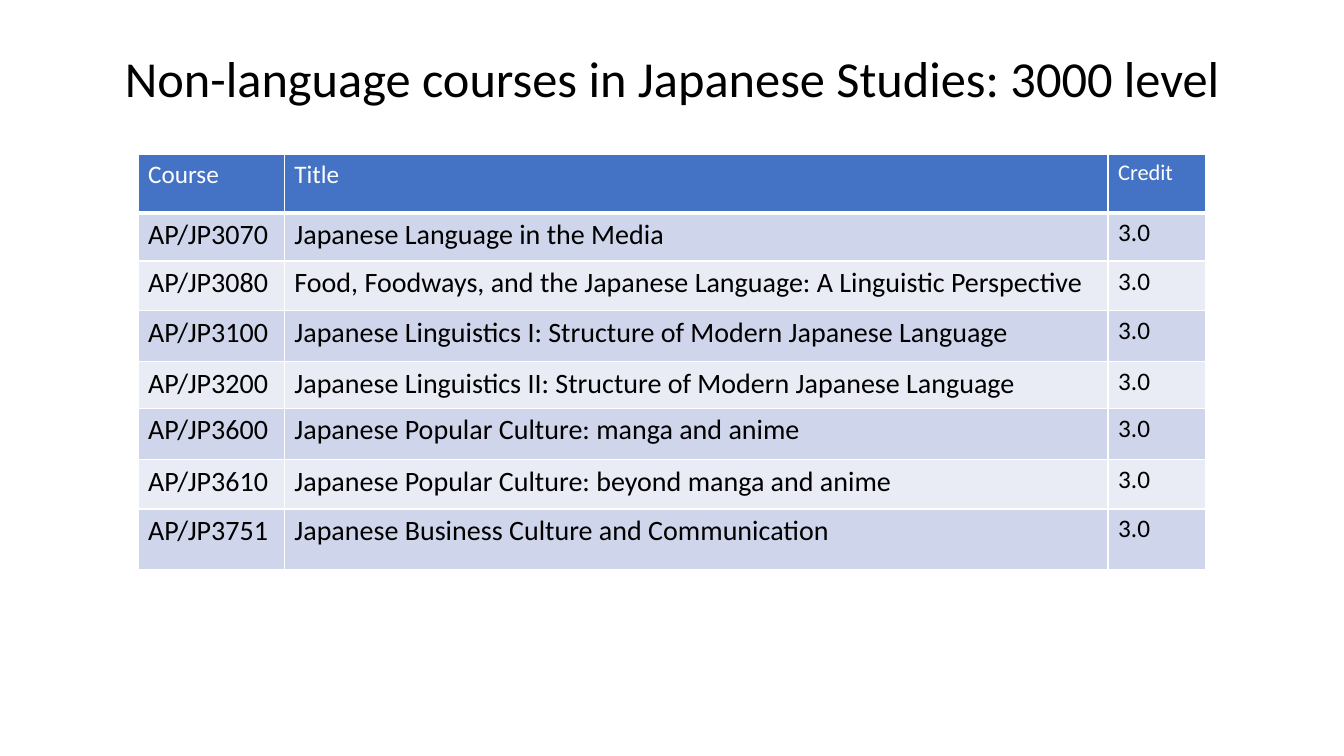
from lxml.etree import SubElement
from pptx import Presentation
from pptx.dml.color import RGBColor
from pptx.enum.text import MSO_ANCHOR, PP_ALIGN
from pptx.oxml.ns import qn
from pptx.util import Inches, Pt

COLORS = {
    "ink": "000000",
    "white": "FFFFFF",
    "head": "4472C4",
    "odd": "CFD5EA",
    "even": "E9EBF5",
}
FONT = "Calibri"

COURSES = [
    ("AP/JP3070", "Japanese Language in the Media"),
    ("AP/JP3080", "Food, Foodways, and the Japanese Language: A Linguistic Perspective"),
    ("AP/JP3100", "Japanese Linguistics I: Structure of Modern Japanese Language"),
    ("AP/JP3200", "Japanese Linguistics II: Structure of Modern Japanese Language"),
    ("AP/JP3600", "Japanese Popular Culture: manga and anime"),
    ("AP/JP3610", "Japanese Popular Culture: beyond manga and anime"),
    ("AP/JP3751", "Japanese Business Culture and Communication"),
]
ROWS = [("Course", "Title", "Credit")] + [(*course, "3.0") for course in COURSES]
WIDTHS = [1.45, 8.17, 0.97]
HEIGHTS = [0.58, 0.48, 0.49, 0.51, 0.46, 0.51, 0.49, 0.6]
HEAD_SIZES = [18, 18, 16]
BODY_SIZES = [20, 20, 18]


class Deck:
    def __init__(self):
        self.prs = Presentation()
        self.prs.slide_width = Inches(13.33)
        self.prs.slide_height = Inches(7.5)
        self.slide = self.prs.slides.add_slide(self.prs.slide_layouts[6])

    def label(self, frame, text, size, color):
        """Fill a text frame with one styled paragraph and return it."""
        frame.text = text
        para = frame.paragraphs[0]
        font = para.runs[0].font
        font.name, font.size, font.bold = FONT, Pt(size), False
        font.color.rgb = RGBColor.from_string(COLORS[color])
        return para

    def title(self, text, left, top, width, height):
        box = self.slide.shapes.add_textbox(
            Inches(left), Inches(top), Inches(width), Inches(height))
        frame = box.text_frame
        frame.word_wrap = True
        frame.vertical_anchor = MSO_ANCHOR.MIDDLE
        para = self.label(frame, text, 36, "ink")
        para.alignment = PP_ALIGN.CENTER
        para.line_spacing = 0.9

    def border(self, cell, base):
        """Draw white cell edges; base is the bottom width in points."""
        props = cell._tc.get_or_add_tcPr()
        for side, width in (("L", 1), ("R", 1), ("T", 1), ("B", base)):
            line = SubElement(props, qn(f"a:ln{side}"), w=str(Pt(width)))
            fill = SubElement(line, qn("a:solidFill"))
            SubElement(fill, qn("a:srgbClr"), val=COLORS["white"])

    def table(self, rows, left, top, widths, heights):
        table = self.slide.shapes.add_table(
            len(rows), len(widths), Inches(left), Inches(top),
            Inches(sum(widths)), Inches(sum(heights))).table
        for col, width in zip(table.columns, widths):
            col.width = Inches(width)
        for i, (row, height) in enumerate(zip(rows, heights)):
            table.rows[i].height = Inches(height)
            if i == 0:
                sizes, ink, tint, base = HEAD_SIZES, "white", "head", 3
            else:
                sizes, ink, base = BODY_SIZES, "ink", 1
                tint = "odd" if i % 2 else "even"
            for j, (text, size) in enumerate(zip(row, sizes)):
                cell = table.cell(i, j)
                self.label(cell.text_frame, text, size, ink)
                self.border(cell, base)
                cell.fill.solid()
                cell.fill.fore_color.rgb = RGBColor.from_string(COLORS[tint])


def main():
    deck = Deck()
    deck.title("Non-language courses in Japanese Studies: 3000 level",
               0.92, 0.08, 11.5, 1.45)
    deck.table(ROWS, 1.37, 1.53, WIDTHS, HEIGHTS)
    deck.prs.save("out.pptx")


if __name__ == "__main__":
    main()
